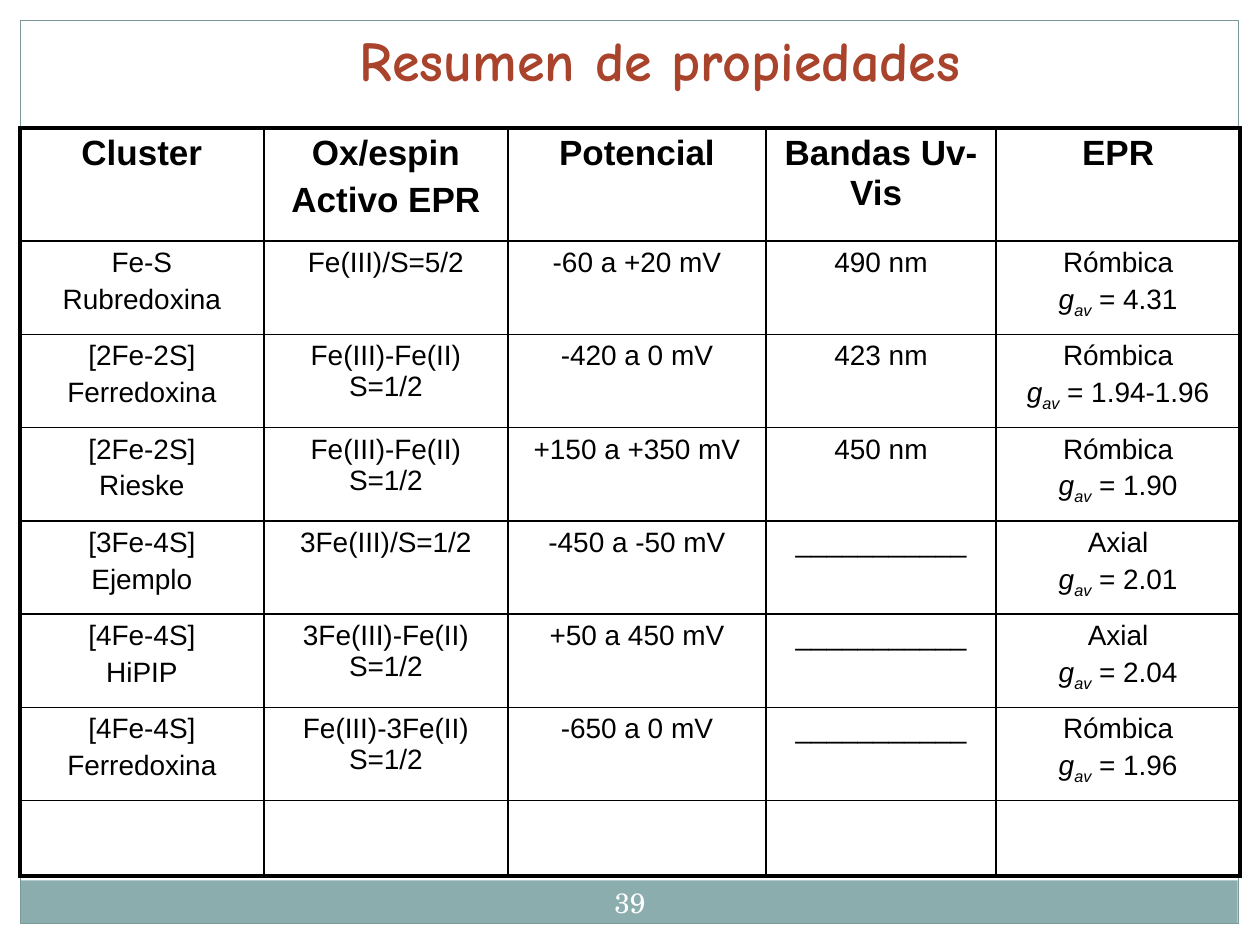
from lxml.etree import SubElement
from pptx import Presentation
from pptx.dml.color import RGBColor
from pptx.enum.shapes import MSO_SHAPE as Shape
from pptx.enum.text import MSO_ANCHOR as Anchor, MSO_AUTO_SIZE as AutoSize, PP_ALIGN as Align
from pptx.oxml.ns import qn
from pptx.util import Cm, Pt

BLACK = RGBColor(0x00, 0x00, 0x00)
WHITE = RGBColor(0xFF, 0xFF, 0xFF)
TEAL = RGBColor(0x8C, 0xAD, 0xAE)
FRAME = RGBColor(0x7C, 0x99, 0x9A)
RUST = RGBColor(0xA9, 0x43, 0x2B)

WIDTH, HEIGHT, MARGIN = 25.4, 19.05, 0.42
HEADERS = ["Cluster", "Ox/espin\nActivo EPR", "Potencial", "Bandas Uv-Vis ", "EPR"]
NO_BAND = "_" * 11
CLUSTERS = [
    ("Fe-S\nRubredoxina", "Fe(III)/S=5/2", "-60 a +20 mV", "490 nm", "Rómbica", "4.31"),
    ("[2Fe-2S]\nFerredoxina", "Fe(III)-Fe(II) S=1/2", "-420 a 0 mV", "423 nm", "Rómbica", "1.94-1.96"),
    ("[2Fe-2S]\nRieske", "Fe(III)-Fe(II) S=1/2", "+150 a +350 mV", "450 nm", "Rómbica", "1.90"),
    ("[3Fe-4S]\nEjemplo", "3Fe(III)/S=1/2", "-450 a -50 mV", NO_BAND, "Axial", "2.01"),
    ("[4Fe-4S]\nHiPIP", "3Fe(III)-Fe(II) S=1/2", "+50 a 450 mV", NO_BAND, "Axial", "2.04"),
    ("[4Fe-4S]\nFerredoxina", "Fe(III)-3Fe(II) S=1/2", "-650 a 0 mV", NO_BAND, "Rómbica", "1.96"),
]
COL_WIDTHS = [4.92, 4.92, 5.2, 4.64, 4.92]
ROW_HEIGHTS = [2.28] + [1.88] * len(CLUSTERS) + [1.52]


def add_run(p, text, size, font="Arial", color=BLACK, bold=False, italic=False):
    """Append a formatted run to a paragraph and return it."""
    r = p.add_run()
    r.text = text
    r.font.size, r.font.name = Pt(size), font
    r.font.bold, r.font.italic = bold, italic
    r.font.color.rgb = color
    return r


def add_rect(s, x, y, w, h, fill=None, line=None):
    """Draw a plain rectangle with an optional fill and outline."""
    sp = s.shapes.add_shape(Shape.RECTANGLE, Cm(x), Cm(y), Cm(w), Cm(h))
    sp.shadow.inherit = False
    if fill is None:
        sp.fill.background()
    else:
        sp.fill.solid()
        sp.fill.fore_color.rgb = fill
    if line is None:
        sp.line.fill.background()
    else:
        sp.line.color.rgb = line
        sp.line.width = Pt(0.75)


def add_backdrop(s):
    """Draw the white margins, the footer band and the frame."""
    add_rect(s, 0, 0, WIDTH, MARGIN, fill=WHITE)
    for x in (WIDTH - MARGIN, 0):
        add_rect(s, x, 0, MARGIN, HEIGHT, fill=WHITE)
    add_rect(s, 0.41, 17.75, 24.54, 0.86, fill=TEAL)
    add_rect(s, MARGIN, MARGIN, 24.55, 18.2, line=FRAME)


def set_title(s, text):
    """Place and format the title placeholder."""
    sp = s.shapes.title
    sp.left, sp.top, sp.width, sp.height = Cm(6.35), Cm(0.39), Cm(13.92), Cm(1.63)
    tf = sp.text_frame
    tf.word_wrap, tf.auto_size = False, AutoSize.SHAPE_TO_FIT_TEXT
    tf.vertical_anchor = Anchor.TOP
    p = tf.paragraphs[0]
    p.alignment = Align.CENTER
    add_run(p, text, 32, "Comic Neue", RUST, bold=True)
    s.shapes._spTree.append(sp._element)


def add_page_number(s, text):
    """Write the page number over the footer band."""
    sp = s.shapes.add_textbox(Cm(11.85), Cm(17.58), Cm(1.7), Cm(1.22))
    tf = sp.text_frame
    tf.word_wrap, tf.vertical_anchor = True, Anchor.MIDDLE
    tf.margin_left = tf.margin_right = tf.margin_top = tf.margin_bottom = Cm(0.13)
    p = tf.paragraphs[0]
    p.alignment = Align.CENTER
    add_run(p, text, 16, "TeX Gyre Schola", WHITE)


def add_cell_paragraph(tf, size, first):
    """Return a centred paragraph spaced by a fifth of its text size."""
    p = tf.paragraphs[0] if first else tf.add_paragraph()
    p.alignment = Align.CENTER
    p.space_before = Pt(size * 0.2)
    return p


def fill_cell(cell, text, size=16, bold=False):
    """Write each line of the text as a paragraph of the cell."""
    for i, line in enumerate(text.split("\n")):
        p = add_cell_paragraph(cell.text_frame, size, i == 0)
        add_run(p, line, size, bold=bold)


def add_g_value(cell, value):
    """Add the averaged g factor below the signal type."""
    p = add_cell_paragraph(cell.text_frame, 16, False)
    add_run(p, "g", 16, italic=True)
    r = add_run(p, "av", 16, italic=True)
    r.font._element.set("baseline", "-25000")
    add_run(p, f" = {value}", 16)


def set_borders(cell, outer):
    """Draw the cell borders, heavier on the outer sides."""
    cell.fill.background()
    pr = cell._tc.get_or_add_tcPr()
    for i, side in enumerate("LRTB"):
        width = Pt(2.25 if side in outer else 1)
        ln = pr.makeelement(qn(f"a:ln{side}"), {"w": str(int(width))})
        fill = SubElement(ln, qn("a:solidFill"))
        SubElement(fill, qn("a:srgbClr"), val=str(BLACK))
        pr.insert(i, ln)


def add_cluster_table(s):
    """Build the table of cluster properties."""
    rows, cols = len(ROW_HEIGHTS), len(COL_WIDTHS)
    frame = s.shapes.add_table(rows, cols, Cm(0.4), Cm(2.58),
                               Cm(sum(COL_WIDTHS)), Cm(sum(ROW_HEIGHTS)))
    table = frame.table
    table.first_row = table.horz_banding = False
    for col, width in zip(table.columns, COL_WIDTHS):
        col.width = Cm(width)
    for row, height in zip(table.rows, ROW_HEIGHTS):
        row.height = Cm(height)
    for c, text in enumerate(HEADERS):
        fill_cell(table.cell(0, c), text, 20, bold=True)
    for r, (*texts, g_value) in enumerate(CLUSTERS, 1):
        for c, text in enumerate(texts):
            fill_cell(table.cell(r, c), text)
        add_g_value(table.cell(r, cols - 1), g_value)
    for r in range(rows):
        for c in range(cols):
            edges = {"L": c == 0, "R": c == cols - 1, "T": r == 0, "B": r == rows - 1}
            set_borders(table.cell(r, c), [side for side, on in edges.items() if on])


def main():
    """Build the slide and save it."""
    prs = Presentation()
    prs.slide_width, prs.slide_height = Cm(WIDTH), Cm(HEIGHT)
    s = prs.slides.add_slide(prs.slide_layouts[5])
    add_backdrop(s)
    add_cluster_table(s)
    set_title(s, "Resumen de propiedades")
    add_page_number(s, "39")
    prs.save("out.pptx")


if __name__ == "__main__":
    main()
